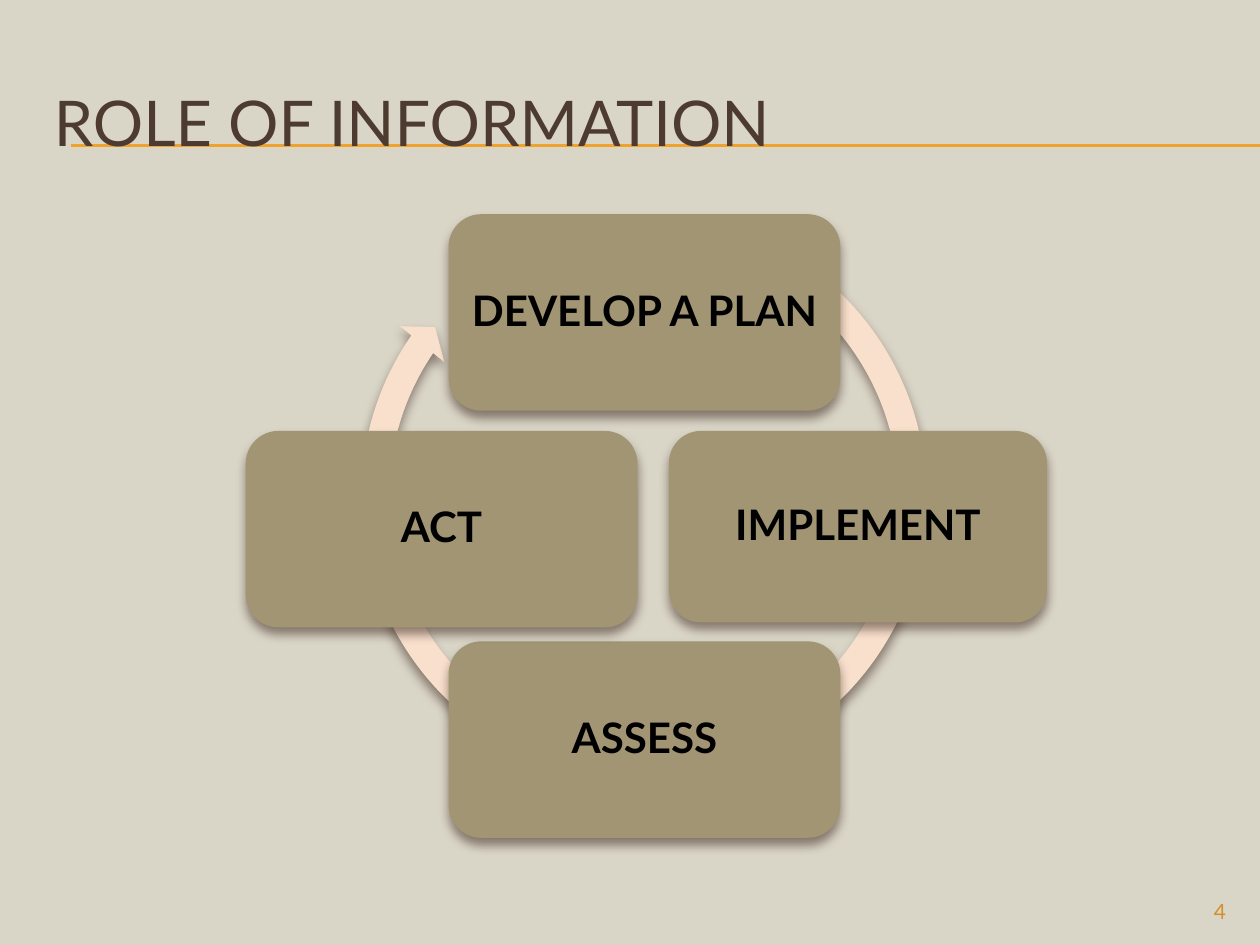
from lxml import etree
from pptx import Presentation
from pptx.dml.color import RGBColor
from pptx.enum.shapes import MSO_CONNECTOR, MSO_SHAPE
from pptx.enum.text import MSO_ANCHOR, PP_ALIGN
from pptx.oxml.ns import qn
from pptx.util import Inches, Pt

ROUNDED = MSO_SHAPE.ROUNDED_RECTANGLE
CIRCULAR_ARROW = MSO_SHAPE.CIRCULAR_ARROW
STRAIGHT = MSO_CONNECTOR.STRAIGHT
LEFT, CENTER, RIGHT = PP_ALIGN.LEFT, PP_ALIGN.CENTER, PP_ALIGN.RIGHT
TOP, MIDDLE = MSO_ANCHOR.TOP, MSO_ANCHOR.MIDDLE

COLORS = {
    "background": "D9D5C7",
    "rule": "F0A22E",
    "title": "4E3B30",
    "arrow": "F9E0CD",
    "step": "A19574",
    "step_text": "000000",
    "shadow": "4E3B30",
    "number": "D48F29",
}
TITLE_FONT = {"name": "Lato", "size": Pt(36)}
STEP_FONT = {"name": "Lato", "size": Pt(24), "bold": True}
NUMBER_FONT = {"name": "Lato", "size": Pt(12)}

# Label, then left, top, width and height inside the cycle's box
STEPS = [
    ("DEVELOP A PLAN", 1.61, 0, 3.11, 1.56),
    ("IMPLEMENT", 3.36, 1.72, 3, 1.52),
    ("ASSESS", 1.61, 3.39, 3.11, 1.56),
    ("ACT", 0, 1.72, 3.11, 1.56),
]


def rgb(role):
    return RGBColor.from_string(COLORS[role])


def write(shape, text, role, font, align, anchor):
    frame = shape.text_frame
    frame.word_wrap = True
    frame.vertical_anchor = anchor
    paragraph = frame.paragraphs[0]
    paragraph.alignment = align
    run = paragraph.add_run()
    run.text = text
    for attribute, value in font.items():
        setattr(run.font, attribute, value)
    run.font.color.rgb = rgb(role)
    return paragraph


def add_text(slide, box, *content):
    return write(slide.shapes.add_textbox(*map(Inches, box)), *content)


def add_shadow(shape):
    """Give the shape a soft shadow straight below it."""
    shape.shadow.inherit = False
    effects = shape._element.spPr.find(qn("a:effectLst"))
    outer = etree.SubElement(effects, qn("a:outerShdw"), blurRad=str(Pt(6)),
                             dist=str(Pt(4)), dir="5400000", rotWithShape="0")
    color = etree.SubElement(outer, qn("a:srgbClr"), val=COLORS["shadow"])
    etree.SubElement(color, qn("a:alpha"), val="60000")


def add_solid(slide, kind, box, role):
    shape = slide.shapes.add_shape(kind, *map(Inches, box))
    shape.fill.solid()
    shape.fill.fore_color.rgb = rgb(role)
    shape.line.fill.background()
    add_shadow(shape)
    return shape


def add_header(slide, left, top, width, height):
    for offset in (0.65, 0.66):
        y = Inches(top + offset)
        rule = slide.shapes.add_connector(STRAIGHT, Inches(left + 0.23), y, Inches(10), y)
        rule.line.color.rgb = rgb("rule")
        rule.line.width = Pt(0.75)
        etree.SubElement(rule._element.spPr, qn("a:effectLst"))
    add_text(slide, (left, top, width, height),
             "ROLE OF INFORMATION", "title", TITLE_FONT, LEFT, MIDDLE)


def add_cycle(slide, left, top):
    arrow = add_solid(slide, CIRCULAR_ARROW,
                      (left + 0.8, top - 0.12, 4.72, 4.72), "arrow")
    for index, value in enumerate((0.047, 2.729, 128.691, 180.052, 0.048)):
        arrow.adjustments[index] = value
    for label, x, y, width, height in STEPS:
        step = add_solid(slide, ROUNDED, (left + x, top + y, width, height), "step")
        paragraph = write(step, label, "step_text", STEP_FONT, CENTER, MIDDLE)
        paragraph.line_spacing = 0.9


def add_slide_number(slide, *box):
    add_text(slide, box, "4", "number", NUMBER_FONT, RIGHT, TOP)


def main():
    deck = Presentation()
    deck.slide_width, deck.slide_height = Inches(10), Inches(7.5)
    slide = deck.slides.add_slide(deck.slide_layouts[6])
    slide.background.fill.solid()
    slide.background.fill.fore_color.rgb = rgb("background")
    add_header(slide, 0.33, 0.5, 9.5, 0.92)
    add_cycle(slide, 1.95, 1.7)
    add_slide_number(slide, 9, 7.08, 0.83, 0.27)
    deck.save("out.pptx")


if __name__ == "__main__":
    main()
